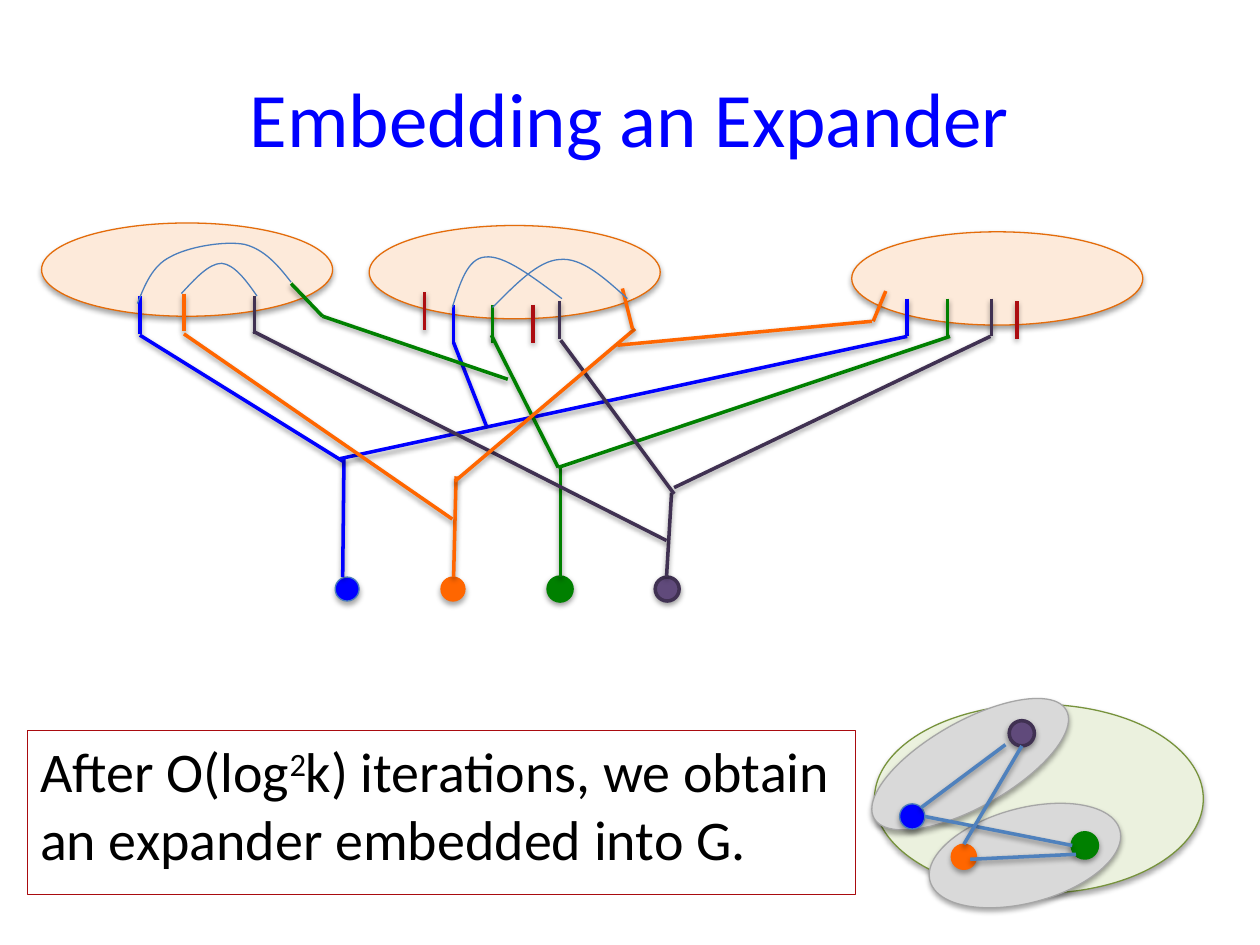
from typing import NamedTuple

from lxml.etree import SubElement
from pptx import Presentation
from pptx.dml.color import RGBColor
from pptx.enum.shapes import MSO_CONNECTOR as Connector, MSO_SHAPE as Preset
from pptx.enum.text import MSO_ANCHOR as Anchor, PP_ALIGN as Align
from pptx.oxml.ns import qn
from pptx.util import Inches, Pt

# Grid: 100 columns by 75 rows; every length below counts in cells
SLIDE_WIDTH, SLIDE_HEIGHT = Inches(10), Inches(7.5)
COLUMN, ROW = SLIDE_WIDTH / 100, SLIDE_HEIGHT / 75

BLUE = RGBColor(0x00, 0x00, 0xFF)
ORANGE = RGBColor(0xFF, 0x66, 0x00)
GREEN = RGBColor(0x00, 0x80, 0x00)
PURPLE = RGBColor(0x60, 0x4A, 0x7B)
DARK_PURPLE = RGBColor(0x40, 0x31, 0x52)
RED = RGBColor(0xAC, 0x0D, 0x11)
BOX_RED = RGBColor(0xA9, 0x0B, 0x0F)
STEEL = RGBColor(0x4B, 0x7E, 0xBC)
EDGE_BLUE = RGBColor(0x4F, 0x81, 0xBD)
PEACH = RGBColor(0xFD, 0xEA, 0xDA)
PEACH_EDGE = RGBColor(0xE4, 0x6C, 0x0A)
PALE_GREEN = RGBColor(0xEB, 0xF1, 0xDE)
OLIVE = RGBColor(0x77, 0x93, 0x3C)
GREY = RGBColor(0xD9, 0xD9, 0xD9)
GREY_EDGE = RGBColor(0xA6, 0xA6, 0xA6)
BLACK = RGBColor(0x00, 0x00, 0x00)

FONT = "Calibri"
THIN, THICK = 0.75, 2
STUB_ROWS = 3


class Style(NamedTuple):
    fill: RGBColor
    line: RGBColor
    weight: float = THIN


class Oval(NamedTuple):
    left: float
    top: float
    width: float
    height: float
    style: Style
    rotation: float = 0


class Segment(NamedTuple):
    x1: float
    y1: float
    x2: float
    y2: float


class Stub(NamedTuple):
    column: float
    top: float
    color: RGBColor


CLUSTER = Style(PEACH, PEACH_EDGE)
SUBSET = Style(GREY, GREY_EDGE)
BLUE_NODE = Style(BLUE, STEEL)
ORANGE_NODE = Style(ORANGE, ORANGE)
GREEN_NODE = Style(GREEN, GREEN, THICK)
PURPLE_NODE = Style(PURPLE, DARK_PURPLE, THICK)

CLUSTERS = [Oval(left, top, 23.1, 7.4, CLUSTER)
            for left, top in ((3.3, 17.7), (29.3, 17.9), (67.6, 18.4))]
TERMINALS = [Oval(left, 45.8, 1.9, 1.9, style) for left, style in (
    (43.5, GREEN_NODE), (26.6, BLUE_NODE), (52, PURPLE_NODE), (35, ORANGE_NODE))]

# Short vertical ends inside the three clusters
STUBS = [
    Stub(11.1, 23.5, BLUE), Stub(14.6, 23.3, ORANGE), Stub(20.2, 23.5, DARK_PURPLE),
    Stub(36, 24.2, BLUE), Stub(33.7, 23.2, RED), Stub(39.1, 24.2, GREEN),
    Stub(44.4, 23.9, DARK_PURPLE), Stub(42.3, 24.2, RED),
    Stub(72, 23.7, BLUE), Stub(75.2, 23.7, GREEN),
    Stub(78.7, 23.7, DARK_PURPLE), Stub(80.7, 23.9, RED),
]

# One tree per terminal, reaching up to the clusters
TREES = {
    BLUE: [Segment(27.2, 45.8, 27.3, 36.4), Segment(27.2, 36.6, 11.1, 26.6),
           Segment(27, 36.4, 72, 26.7), Segment(38.6, 33.8, 36, 27.2)],
    GREEN: [Segment(23.1, 22.5, 25.6, 25.1), Segment(44.5, 45.8, 44.5, 37.1),
            Segment(40.3, 30.1, 25.6, 25.1), Segment(44.3, 37.1, 39, 26.6),
            Segment(44.3, 37.1, 75.4, 26.7)],
    DARK_PURPLE: [Segment(52.9, 45.8, 53.3, 39.1), Segment(53.5, 38.7, 78.6, 26.7),
                  Segment(53.5, 39.2, 44.5, 27), Segment(52.9, 42.9, 20.1, 26.3)],
    ORANGE: [Segment(36, 45.8, 36.2, 37.8), Segment(35.9, 41.2, 14.6, 26.5),
             Segment(36.1, 38.2, 50.4, 26.1), Segment(49.4, 22.9, 50.2, 26.1),
             Segment(70.3, 23.1, 69.3, 25.5), Segment(49, 27.4, 69.2, 25.5)],
}

# The expander at the lower right
EXPANDER = [
    Oval(69.4, 55.9, 26.1, 15, Style(PALE_GREEN, OLIVE)),
    Oval(77.6, 60.1, 7.5, 15.6, SUBSET, 255),
    Oval(73.6, 51.9, 6.8, 17.5, SUBSET, 60.6),
    Oval(85.1, 66.1, 2, 2, GREEN_NODE),
    Oval(75.5, 67, 2, 2, ORANGE_NODE),
    Oval(80.1, 57.2, 2, 2, PURPLE_NODE),
    Oval(71.4, 63.8, 2, 2, BLUE_NODE),
]
EXPANDER_EDGES = [
    Segment(73.4, 64.8, 85.1, 67.1), Segment(76.5, 67, 81.1, 59.2),
    Segment(73.1, 64.1, 79.8, 59.1), Segment(77, 68.2, 85.4, 67.8),
]

# Bezier arcs: a start, then two control points and an end for each piece
ARCS = [
    [(10.9, 24.1), (11.5, 22.6), (12.1, 21.1), (13.5, 20.4), (14.9, 19.6),
     (17.8, 19.1), (19.4, 19.4), (21, 19.8), (22.1, 21.1), (23.1, 22.4)],
    [(14.4, 23.3), (15.5, 22.1), (16.6, 20.9), (17.6, 20.9),
     (18.6, 21), (19.5, 22.2), (20.4, 23.5)],
    [(35.9, 24.4), (36.5, 22.5), (37.1, 20.5), (38.5, 20.4),
     (40, 20.2), (42.3, 22), (44.6, 23.7)],
    [(39.1, 24.4), (40.9, 22.6), (42.7, 20.7), (44.4, 20.6),
     (46.2, 20.4), (48, 22.1), (49.8, 23.7)],
]


def place(*cells: float) -> list[int]:
    """Turn alternating columns and rows into slide lengths."""
    return [round(cell * (ROW if index % 2 else COLUMN))
            for index, cell in enumerate(cells)]


def set_line(shape, color: RGBColor, weight: float) -> None:
    shape.line.color.rgb = color
    shape.line.width = Pt(weight)


def add_shadow(shape, weight: float) -> None:
    distance, alpha = (1.6, 38) if weight == THICK else (1.8, 35)
    effects = SubElement(shape._element.spPr, qn("a:effectLst"))
    shadow = SubElement(effects, qn("a:outerShdw"), blurRad=str(Pt(3.1)),
                        dist=str(Pt(distance)), dir="5400000", rotWithShape="0")
    color = SubElement(shadow, qn("a:srgbClr"), val=str(BLACK))
    SubElement(color, qn("a:alpha"), val=str(alpha * 1000))


def add_oval(slide, oval: Oval) -> None:
    shape = slide.shapes.add_shape(Preset.OVAL, *place(*oval[:4]))
    shape.rotation = oval.rotation
    shape.fill.solid()
    shape.fill.fore_color.rgb = oval.style.fill
    set_line(shape, oval.style.line, oval.style.weight)
    add_shadow(shape, oval.style.weight)


def add_segment(slide, segment: Segment, color: RGBColor) -> None:
    connector = slide.shapes.add_connector(Connector.STRAIGHT, *place(*segment))
    set_line(connector, color, THICK)
    add_shadow(connector, THICK)


def add_arc(slide, points: list[tuple[float, float]]) -> None:
    start, *others = [place(*point) for point in points]
    builder = slide.shapes.build_freeform(*start)
    builder.add_line_segments(others, close=False)
    shape = builder.convert_to_shape()
    shape.fill.background()
    set_line(shape, STEEL, THIN)
    shape.shadow.inherit = False
    # Merge each three straight pieces into one cubic curve
    outline = next(shape._element.iter(qn("a:path")))
    pieces = outline.findall(qn("a:lnTo"))
    for index in range(0, len(pieces), 3):
        curve = SubElement(outline, qn("a:cubicBezTo"))
        for piece in pieces[index:index + 3]:
            curve.append(piece[0])
            outline.remove(piece)


def add_text(slide, cells: tuple, parts: list[str], size: float, color: RGBColor):
    box = slide.shapes.add_textbox(*place(*cells))
    box.text_frame.word_wrap = True
    paragraph = box.text_frame.paragraphs[0]
    for part in parts:
        run = paragraph.add_run()
        run.text = part
        run.font.name = FONT
        run.font.size = Pt(size)
        run.font.color.rgb = color
    return box, paragraph


def main() -> None:
    presentation = Presentation()
    presentation.slide_width, presentation.slide_height = SLIDE_WIDTH, SLIDE_HEIGHT
    slide = presentation.slides.add_slide(presentation.slide_layouts[6])

    # Clusters, terminals and their trees
    for oval in CLUSTERS + TERMINALS:
        add_oval(slide, oval)
    for stub in STUBS:
        add_segment(slide, Segment(stub.column, stub.top, stub.column,
                                   stub.top + STUB_ROWS), stub.color)
    for color, segments in TREES.items():
        for segment in segments:
            add_segment(slide, segment, color)
    for arc in ARCS:
        add_arc(slide, arc)

    # Expander
    for oval in EXPANDER:
        add_oval(slide, oval)
    for edge in EXPANDER_EDGES:
        add_segment(slide, edge, EDGE_BLUE)

    # Title and conclusion
    title, paragraph = add_text(slide, (5, 3, 90, 12.5), ["Embedding an Expander"], 44, BLUE)
    title.text_frame.vertical_anchor = Anchor.MIDDLE
    paragraph.alignment = Align.CENTER
    conclusion, paragraph = add_text(
        slide, (2.2, 58, 65.7, 13),
        ["After O(log", "2", "k) iterations, we obtain an expander embedded into G."], 32, BLACK)
    paragraph.runs[1].font._element.set("baseline", "30000")
    set_line(conclusion, BOX_RED, THIN)

    presentation.save("out.pptx")


if __name__ == "__main__":
    main()
